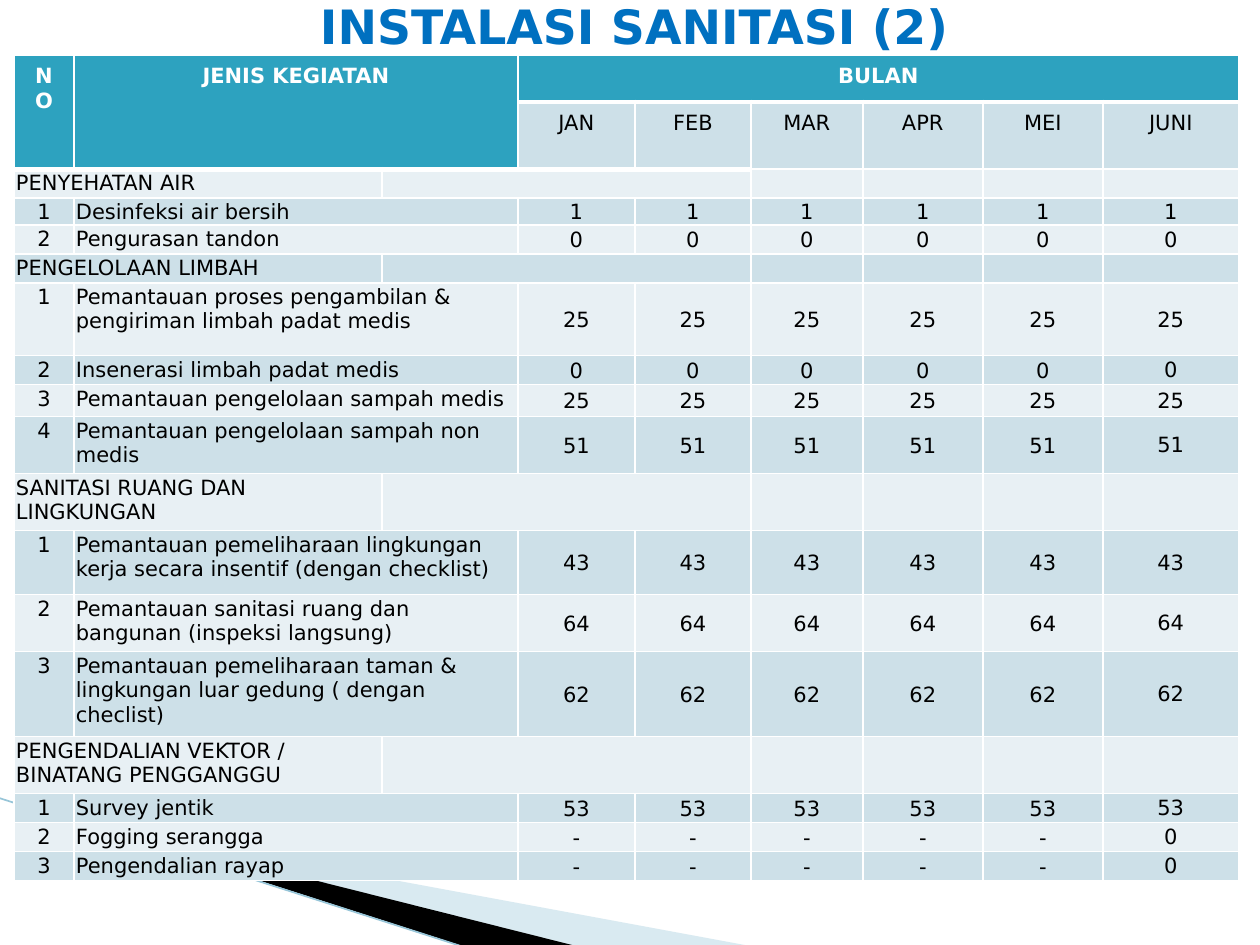
from dataclasses import dataclass
from typing import Any

from lxml.etree import SubElement as Sub
from pptx import Presentation as Deck
from pptx.dml.color import RGBColor as Rgb
from pptx.enum.shapes import MSO_CONNECTOR as Link
from pptx.enum.text import MSO_ANCHOR as Anchor, PP_ALIGN as Align
from pptx.oxml.ns import qn
from pptx.util import Pt

SCALE = 914400 / 126


def px(size):
    return round(size * SCALE)


@dataclass(frozen=True)
class Theme:
    face: str = "DejaVu Sans"
    head: str = "2DA2BF"
    bands: tuple = ("CDE0E8", "E8F0F4")
    white: str = "FFFFFF"
    black: str = "000000"
    title: str = "0070C0"
    sky: str = "A0CBDC"
    edge: str = "97C5D8"
    large: int = 27
    small: int = 12


@dataclass
class Board:
    slide: Any
    theme: Theme

    def put(self, frame, runs, size, color, bold=False, align=Align.LEFT):
        para = frame.paragraphs[0]
        para.alignment = align
        for words in runs:
            run = para.add_run()
            run.text = words
            font = run.font
            font.name, font.size, font.bold = self.theme.face, Pt(size), bold
            font.color.rgb = Rgb.from_string(color)

    def inset(self, item, left, top, right, base):
        item.margin_left, item.margin_top = px(left), px(top)
        item.margin_right, item.margin_bottom = px(right), px(base)

    def text(self, x, y, wide, high, runs, size, color):
        frame = self.slide.shapes.add_textbox(px(x), px(y), px(wide), px(high)).text_frame
        frame.word_wrap = True
        frame.vertical_anchor = Anchor.MIDDLE
        self.inset(frame, 12, 6, 12, 0)
        self.put(frame, runs, size, color, True, Align.CENTER)

    def shape(self, points, color, alpha=100):
        build = self.slide.shapes.build_freeform(*points[0], scale=SCALE)
        build.add_line_segments(points[1:])
        shape = build.convert_to_shape()
        shape.shadow.inherit = False
        shape.line.fill.background()
        shape.fill.solid()
        shape.fill.fore_color.rgb = Rgb.from_string(color)
        if alpha < 100:
            tone = shape._element.spPr.find(".//" + qn("a:srgbClr"))
            Sub(tone, qn("a:alpha"), val=str(alpha * 1000))

    def line(self, x1, y1, x2, y2, color, width):
        line = self.slide.shapes.add_connector(Link.STRAIGHT, px(x1), px(y1), px(x2), px(y2))
        line.line.color.rgb = Rgb.from_string(color)
        line.line.width = Pt(width)
        Sub(line._element.spPr, qn("a:effectLst"))

    def grid(self, x, y, cols, rows):
        table = self.slide.shapes.add_table(
            len(rows), len(cols), px(x), px(y), px(sum(cols)), px(sum(rows))).table
        table.first_row = table.horz_banding = False
        for col, wide in zip(table.columns, cols):
            col.width = px(wide)
        for row, high in zip(table.rows, rows):
            row.height = px(high)
        for r in range(len(rows)):
            for c in range(len(cols)):
                cell = table.cell(r, c)
                head = r == 0 or (r == 1 and c < 3)
                self.frame(cell, 3 if heavy(r - 1, c) else 1, 3 if heavy(r, c) else 1)
                cell.fill.solid()
                cell.fill.fore_color.rgb = Rgb.from_string(
                    self.theme.head if head else self.theme.bands[(r + 1) % 2])
                self.inset(cell, 2, 2, 2, 0)
                end = Sub(cell.text_frame.paragraphs[0]._p, qn("a:endParaRPr"))
                end.set("sz", str(self.theme.small * 100))
        return table

    def frame(self, cell, top, base):
        prop = cell._tc.get_or_add_tcPr()
        for side, width in (("L", 1), ("R", 1), ("T", top), ("B", base)):
            line = Sub(prop, qn("a:ln" + side), w=str(Pt(width)))
            fill = Sub(line, qn("a:solidFill"))
            Sub(fill, qn("a:srgbClr"), val=self.theme.white)

    def head(self, cell, words, color, bold):
        self.inset(cell, 19, 9, 19, 9)
        self.put(cell.text_frame, [words], self.theme.small, color, bold, Align.CENTER)

    def cell(self, cell, words, align=Align.LEFT, anchor=Anchor.TOP):
        cell.vertical_anchor = anchor
        self.put(cell.text_frame, [words], self.theme.small, self.theme.black, align=align)


def heavy(row, col):
    return row == 0 or (row == 1 and col < 5)


COLS = [60, 308, 136, 117, 116, 112, 120, 120, 136]
MONTHS = ["JAN", "FEB", "MAR", "APR", "MEI", "JUNI"]
GROUPS = [
    (29, "PENYEHATAN AIR", [
        (16, "Desinfeksi air bersih", "1", "1"),
        (29, "Pengurasan tandon", "0", "0")]),
    (29, "PENGELOLAAN LIMBAH", [
        (73, "Pemantauan proses pengambilan & pengiriman limbah padat medis", "25", "25"),
        (29, "Insenerasi limbah padat medis", "0", "0"),
        (32, "Pemantauan pengelolaan sampah medis", "25", "25"),
        (57, "Pemantauan pengelolaan sampah non medis", "51", "51")]),
    (57, "SANITASI RUANG DAN LINGKUNGAN", [
        (64, "Pemantauan pemeliharaan lingkungan kerja secara insentif (dengan checklist)",
         "43", "43"),
        (57, "Pemantauan sanitasi ruang dan bangunan (inspeksi langsung)", "64", "64"),
        (85, "Pemantauan pemeliharaan taman & lingkungan luar gedung ( dengan checlist)",
         "62", "62")]),
    (57, "PENGENDALIAN VEKTOR / BINATANG PENGGANGGU", [
        (29, "Survey jentik", "53", "53"),
        (29, "Fogging serangga", "-", "0"),
        (29, "Pengendalian rayap", "-", "0")]),
]


def fill(board):
    theme = board.theme
    rows = [47, 47]
    for high, name, tasks in GROUPS:
        rows += [high] + [task[0] for task in tasks]
    table = board.grid(14, 55, COLS, rows)
    at = table.cell
    at(0, 0).merge(at(1, 0))
    at(0, 1).merge(at(1, 2))
    at(0, 3).merge(at(0, 8))
    for col, words in ((0, "NO"), (1, "JENIS KEGIATAN"), (3, "BULAN")):
        board.head(at(0, col), words, theme.white, True)
    for col, month in enumerate(MONTHS, 3):
        board.head(at(1, col), month, theme.black, False)
    row = 2
    for high, name, tasks in GROUPS:
        at(row, 0).merge(at(row, 1))
        at(row, 2).merge(at(row, 4))
        board.cell(at(row, 0), name)
        for rank, (high, label, value, last) in enumerate(tasks, 1):
            row += 1
            at(row, 1).merge(at(row, 2))
            board.cell(at(row, 0), str(rank), Align.CENTER)
            board.cell(at(row, 1), label)
            for col, count in enumerate([value] * 5 + [last], 3):
                board.cell(at(row, col), count, Align.CENTER, Anchor.MIDDLE)
            board.inset(at(row, 8), 1, 1, 1, 0)
        row += 1


def main():
    deck = Deck()
    deck.slide_width, deck.slide_height = px(1260), px(945)
    theme = Theme()
    board = Board(deck.slides.add_slide(deck.slide_layouts[6]), theme)
    board.shape([(69, 820), (750, 946), (575, 946), (69, 819)], theme.sky, 40)
    board.shape([(67, 818), (576, 946), (469, 948), (68, 819)], theme.black)
    board.line(-1, 798, 467, 948, theme.edge, 0.95)
    fill(board)
    board.text(67, -6, 1134, 58, ["INSTALASI SANITASI (2)"], theme.large, theme.title)
    deck.save("out.pptx")


if __name__ == "__main__":
    main()
